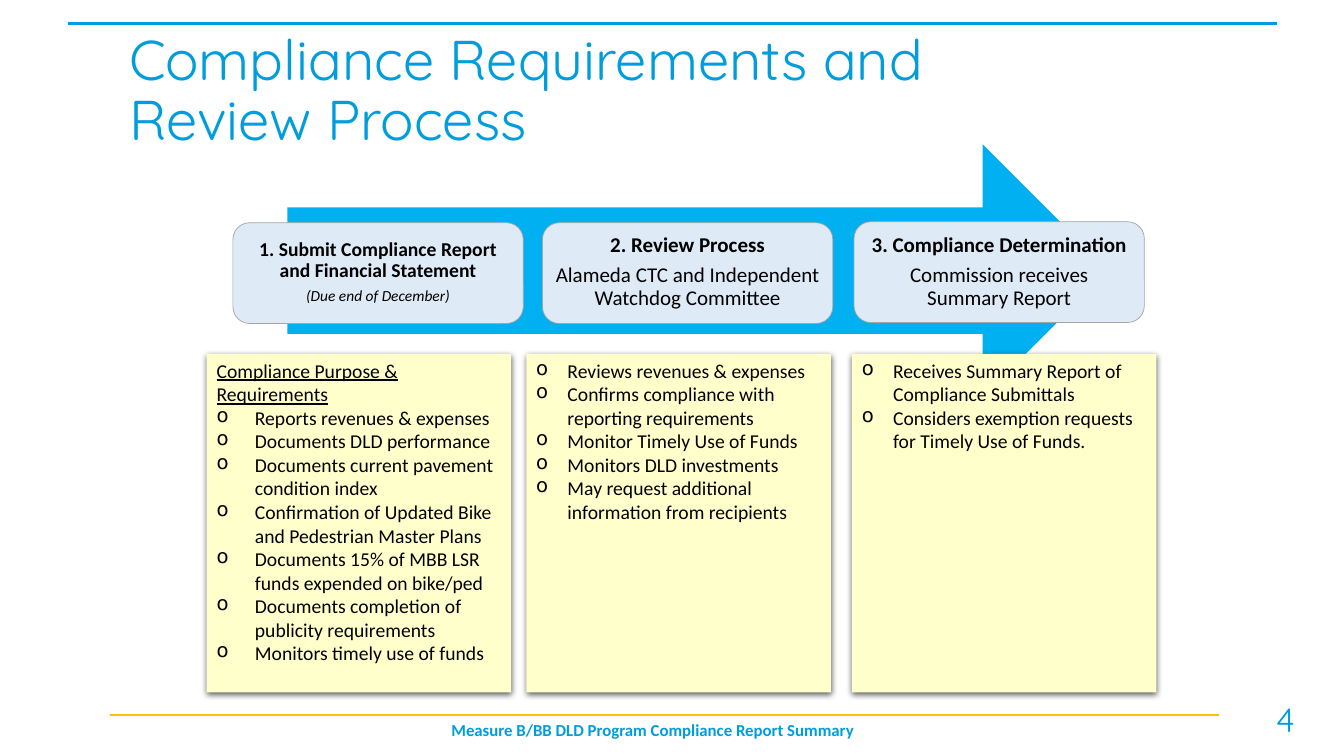
import pptx
import pptx.dml.color
import pptx.enum.shapes
import pptx.enum.text
import pptx.oxml
import pptx.oxml.ns
import pptx.util
from pptx.util import Inches

RGBColor = pptx.dml.color.RGBColor
SHAPE = pptx.enum.shapes.MSO_SHAPE
ALIGN = pptx.enum.text.PP_ALIGN
ANCHOR = pptx.enum.text.MSO_ANCHOR

BLUE = RGBColor(0x00, 0x9D, 0xDC)
ARROW_BLUE = RGBColor(0x00, 0xB0, 0xF0)
CARD_BLUE = RGBColor(0xDE, 0xEB, 0xF7)
GREY = RGBColor(0xA5, 0xA5, 0xA5)
GOLD = RGBColor(0xFF, 0xC0, 0x00)
CREAM = RGBColor(0xFF, 0xFF, 0xCC)
BLACK = RGBColor(0x00, 0x00, 0x00)

TITLE_FONT = "Quicksand"
BODY_FONT = "Calibri"

# left, top, then (text, size, bold, italic) for each paragraph
STEPS = [
    (2.31, 2.21, [
        ("1. Submit Compliance Report and Financial Statement", 14, True, False),
        ("(Due end of December)", 11, False, True),
    ]),
    (5.38, 2.21, [
        ("2. Review Process", 15, True, False),
        ("Alameda CTC and Independent Watchdog Committee", 15, False, False),
    ]),
    (8.47, 2.2, [
        ("3. Compliance Determination", 15, True, False),
        ("Commission receives\vSummary Report", 15, False, False),
    ]),
]

# left, heading, bullet indent, bullets
NOTES = [
    (2.05, "Compliance Purpose & Requirements", 0.38, [
        "Reports revenues & expenses",
        "Documents DLD performance",
        "Documents current pavement condition index",
        "Confirmation of Updated Bike and Pedestrian Master Plans",
        "Documents 15% of MBB LSR funds expended on bike/ped",
        "Documents completion of publicity requirements",
        "Monitors timely use of funds",
    ]),
    (5.22, None, 0.31, [
        "Reviews revenues & expenses",
        "Confirms compliance with reporting requirements",
        "Monitor Timely Use of Funds",
        "Monitors DLD investments",
        "May request additional information from recipients",
    ]),
    (8.45, None, 0.31, [
        "Receives Summary Report of Compliance Submittals",
        "Considers exemption requests for Timely Use of Funds.",
    ]),
]


class SlideBuilder:
    def __init__(self, slide):
        self.slide = slide

    def runs(self, paragraph, text, size, color=BLACK, font=BODY_FONT,
             bold=False, italic=False, underline=False):
        """Add one run per line, with line breaks at vertical tabs."""
        for index, line in enumerate(text.split("\v")):
            if index:
                paragraph.add_line_break()
            run = paragraph.add_run()
            run.text = line
            run.font.name = font
            run.font.size = pptx.util.Pt(size)
            run.font.color.rgb = color
            run.font.bold = bold
            run.font.italic = italic
            run.font.underline = underline

    def paragraphs(self, frame, count):
        """Return count paragraphs, the first being the one already there."""
        return [frame.paragraphs[0]] + [frame.add_paragraph() for _ in range(count - 1)]

    def title(self, text):
        shape = self.slide.shapes.title
        shape.left, shape.top = Inches(1.18), Inches(0.19)
        shape.width, shape.height = Inches(11), Inches(1.45)
        frame = shape.text_frame
        frame.auto_size = pptx.enum.text.MSO_AUTO_SIZE.NONE
        frame.vertical_anchor = ANCHOR.MIDDLE
        paragraph = frame.paragraphs[0]
        paragraph.alignment = ALIGN.LEFT
        paragraph.line_spacing = 0.9
        self.runs(paragraph, text, 40, BLUE, TITLE_FONT)

    def text_box(self, left, top, width, height, anchor):
        box = self.slide.shapes.add_textbox(
            Inches(left), Inches(top), Inches(width), Inches(height))
        frame = box.text_frame
        frame.word_wrap = True
        frame.vertical_anchor = anchor
        return frame

    def label(self, left, top, width, height, text, size, font, bold, anchor):
        paragraph = self.text_box(left, top, width, height, anchor).paragraphs[0]
        paragraph.alignment = ALIGN.CENTER
        self.runs(paragraph, text, size, BLUE, font, bold)

    def rule(self, left, right, top, color, weight):
        line = self.slide.shapes.add_connector(
            pptx.enum.shapes.MSO_CONNECTOR.STRAIGHT,
            Inches(left), Inches(top), Inches(right), Inches(top))
        line.line.color.rgb = color
        line.line.width = pptx.util.Pt(weight)
        pptx.oxml.ns.qn("a:effectLst")
        line._element.spPr.append(pptx.oxml.parse_xml(
            f'<a:effectLst {pptx.oxml.ns.nsdecls("a")}/>'))

    def shape(self, kind, left, top, width, height, fill, outline=None):
        shape = self.slide.shapes.add_shape(
            kind, Inches(left), Inches(top), Inches(width), Inches(height))
        shape.shadow.inherit = False
        shape.fill.solid()
        shape.fill.fore_color.rgb = fill
        if outline is None:
            shape.line.fill.background()
        else:
            shape.line.color.rgb = outline
            shape.line.width = pptx.util.Pt(0.5)
        return shape

    def step(self, left, top, lines):
        self.shape(SHAPE.ROUNDED_RECTANGLE, left, top, 2.88, 1, CARD_BLUE, GREY)
        frame = self.text_box(left + 0.05, 2.25, 2.78, 0.9, ANCHOR.MIDDLE)
        frame.margin_left = frame.margin_right = Inches(0.06)
        frame.margin_top = frame.margin_bottom = Inches(0.06)
        for paragraph, line in zip(self.paragraphs(frame, len(lines)), lines):
            text, size, bold, italic = line
            paragraph.alignment = ALIGN.CENTER
            paragraph.line_spacing = 0.9
            paragraph.space_after = pptx.util.Pt(5)
            self.runs(paragraph, text, size, bold=bold, italic=italic)

    def drop_shadow(self, shape):
        effects = shape._element.spPr.find(pptx.oxml.ns.qn("a:effectLst"))
        effects.append(pptx.oxml.parse_xml(
            f'<a:outerShdw {pptx.oxml.ns.nsdecls("a")} blurRad="57150" dist="19050" '
            'dir="5400000" algn="ctr" rotWithShape="0"><a:srgbClr val="000000">'
            '<a:alpha val="63000"/></a:srgbClr></a:outerShdw>'))

    def bullet(self, paragraph, indent):
        properties = paragraph._p.get_or_add_pPr()
        properties.set("marL", str(Inches(indent)))
        properties.set("indent", str(-Inches(indent)))
        properties.append(pptx.oxml.parse_xml(
            f'<a:buChar {pptx.oxml.ns.nsdecls("a")} char="o"/>'))

    def note(self, left, heading, indent, bullets):
        shape = self.shape(SHAPE.RECTANGLE, left, 3.51, 3.02, 3.36, CREAM)
        self.drop_shadow(shape)
        frame = shape.text_frame
        frame.word_wrap = True
        frame.vertical_anchor = ANCHOR.TOP
        lines = ([heading] if heading else []) + bullets
        for paragraph, text in zip(self.paragraphs(frame, len(lines)), lines):
            paragraph.alignment = ALIGN.LEFT
            if text != heading:
                self.bullet(paragraph, indent)
            self.runs(paragraph, text, 14, underline=text == heading)


def main():
    presentation = pptx.Presentation()
    presentation.slide_width = Inches(13.33)
    presentation.slide_height = Inches(7.5)
    builder = SlideBuilder(presentation.slides.add_slide(presentation.slide_layouts[5]))

    builder.label(2.7, 7.09, 7.55, 0.38, "Measure B/BB DLD Program Compliance Report Summary",
                  12, BODY_FONT, True, ANCHOR.TOP)
    builder.label(12.29, 6.88, 0.92, 0.5, "4", 24, TITLE_FONT, False, ANCHOR.MIDDLE)
    builder.rule(1.09, 12.09, 7.09, GOLD, 1.5)
    builder.rule(0.67, 12.67, 0.23, BLUE, 2.25)
    builder.title("Compliance Requirements and \vReview Process")
    builder.shape(SHAPE.RIGHT_ARROW, 2.85, 1.43, 8.15, 2.51, ARROW_BLUE)
    for step in STEPS:
        builder.step(*step)
    for note in NOTES:
        builder.note(*note)
    presentation.save("out.pptx")


if __name__ == "__main__":
    main()
